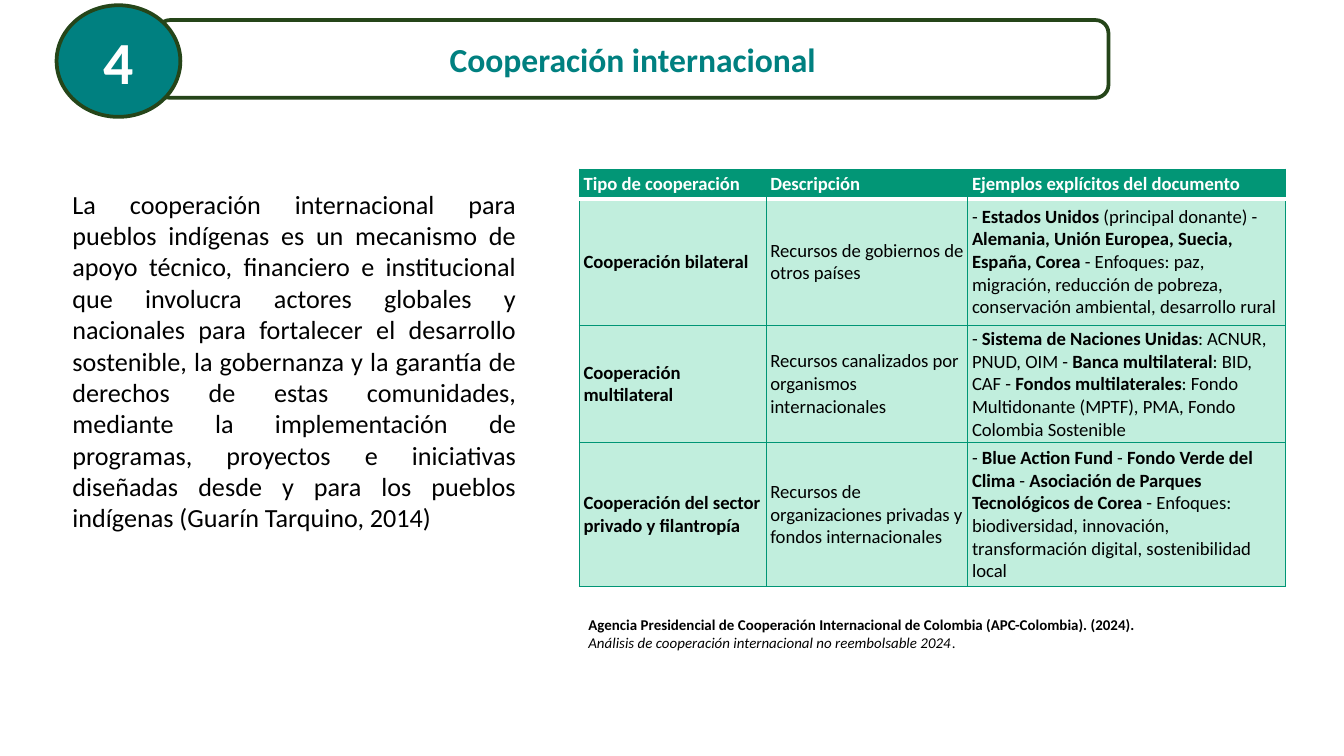
"""Build the slide on international cooperation for indigenous peoples."""
from lxml import etree
from pptx import Presentation
from pptx.dml.color import RGBColor
from pptx.enum.shapes import MSO_SHAPE
from pptx.enum.text import MSO_ANCHOR, MSO_AUTO_SIZE, PP_ALIGN
from pptx.oxml.ns import qn
from pptx.util import Cm, Pt

ROUND, OVAL = MSO_SHAPE.ROUNDED_RECTANGLE, MSO_SHAPE.OVAL
MIDDLE, FIXED = MSO_ANCHOR.MIDDLE, MSO_AUTO_SIZE.NONE
LEFT, CENTER, JUSTIFY = PP_ALIGN.LEFT, PP_ALIGN.CENTER, PP_ALIGN.JUSTIFY

WHITE = RGBColor(0xFF, 0xFF, 0xFF)
BLACK = RGBColor(0x00, 0x00, 0x00)
TEAL = RGBColor(0x00, 0x80, 0x80)
FOREST = RGBColor(0x25, 0x45, 0x19)
GREEN = RGBColor(0x02, 0x96, 0x76)
EDGE = RGBColor(0x00, 0x95, 0x75)
MINT = RGBColor(0xC1, 0xEE, 0xDD)

FONT = "Calibri"
BANNER = (2.97, 0.38, 17.98, 1.47)
BADGE = (1.07, 0.1, 2.34, 2.11)
WIDTHS = (3.53, 3.81, 6)
HEIGHTS = (0.56, 2.39, 2.16, 2.72)

BODY = (
    "La cooperación internacional para pueblos indígenas es un mecanismo de apoyo "
    "técnico, financiero e institucional que involucra actores globales y nacionales "
    "para fortalecer el desarrollo sostenible, la gobernanza y la garantía de derechos "
    "de estas comunidades, mediante la implementación de programas, proyectos e "
    "iniciativas diseñadas desde y para los pueblos indígenas (Guarín Tarquino, 2014)"
)
SOURCE = [
    ("Agencia Presidencial de Cooperación Internacional de Colombia "
     "(APC-Colombia). (2024).", "b"),
    ("\n", ""),
    ("Análisis de cooperación internacional no reembolsable 2024", "i"),
    (".", ""),
]
HEADS = ("Tipo de cooperación", "Descripción", "Ejemplos explícitos del documento")
ROWS = [
    ("Cooperación bilateral", "Recursos de gobiernos de otros países", [
        ("- ", ""), ("Estados Unidos", "b"), (" (principal donante) - ", ""),
        ("Alemania, Unión Europea, Suecia, España, Corea", "b"),
        (" - Enfoques: paz, migración, reducción de pobreza, "
         "conservación ambiental, desarrollo rural", ""),
    ]),
    ("Cooperación multilateral",
     "Recursos canalizados por organismos internacionales", [
         ("- ", ""), ("Sistema de Naciones Unidas", "b"),
         (": ACNUR, PNUD, OIM - ", ""), ("Banca multilateral", "b"),
         (": BID, CAF - ", ""), ("Fondos multilaterales", "b"),
         (": Fondo Multidonante (MPTF), PMA, Fondo Colombia Sostenible", ""),
     ]),
    ("Cooperación del sector privado y filantropía",
     "Recursos de organizaciones privadas y fondos internacionales", [
         ("- ", ""), ("Blue Action Fund", "b"), (" - ", ""),
         ("Fondo Verde del Clima", "b"), (" - ", ""),
         ("Asociación de Parques Tecnológicos de Corea", "b"),
         (" - Enfoques: biodiversidad, innovación, transformación digital, "
          "sostenibilidad local", ""),
     ]),
]


def write(frame, runs, size, color=BLACK, align=LEFT):
    """Fill the first paragraph of a frame with styled runs."""
    para = frame.paragraphs[0]
    para.alignment = align
    for text, style in runs:
        if text == "\n":
            para.add_line_break()
            continue
        run = para.add_run()
        run.text = text
        font = run.font
        font.name, font.size = FONT, Pt(size)
        font.bold, font.italic = style == "b", style == "i"
        font.color.rgb = color


def add_shape(slide, kind, box, fill):
    """Add a filled shape with the dark green outline."""
    shape = slide.shapes.add_shape(kind, *map(Cm, box))
    shape.shadow.inherit = False
    shape.fill.solid()
    shape.fill.fore_color.rgb = fill
    shape.line.color.rgb = FOREST
    shape.line.width = Pt(2)
    shape.text_frame.vertical_anchor = MIDDLE
    return shape


def add_text(slide, box, runs, size, align=LEFT):
    """Add a wrapped text box."""
    frame = slide.shapes.add_textbox(*map(Cm, box)).text_frame
    frame.word_wrap = True
    write(frame, runs, size, align=align)


def set_title(slide, text):
    """Place the title over the banner and bring it to the front."""
    title = slide.shapes.title
    title.left, title.top, title.width, title.height = map(Cm, BANNER)
    frame = title.text_frame
    frame.auto_size = FIXED
    frame.vertical_anchor = MIDDLE
    write(frame, [(text, "b")], 18, TEAL, CENTER)
    slide.shapes._spTree.append(title._element)


def add_edge(cell, side, color, width):
    """Draw one border of a cell, or hide it when there is no color."""
    line = etree.SubElement(cell._tc.get_or_add_tcPr(), qn(f"a:ln{side}"))
    line.set("w", str(Pt(width)))
    if color is None:
        etree.SubElement(line, qn("a:noFill"))
    else:
        fill = etree.SubElement(line, qn("a:solidFill"))
        etree.SubElement(fill, qn("a:srgbClr")).set("val", str(color))


def fill_cell(cell, runs, fill, color, edges):
    """Format a cell, with edges keyed by side, and write its runs."""
    cell.margin_left = cell.margin_right = Cm(0.08)
    cell.margin_top = cell.margin_bottom = Cm(0.05)
    cell.vertical_anchor = MIDDLE
    for side in "LRTB":
        add_edge(cell, side, *edges.get(side, (EDGE, 0.75)))
    cell.fill.solid()
    cell.fill.fore_color.rgb = fill
    write(cell.text_frame, runs, 10, color)


def add_grid(slide):
    """Add the table of cooperation types."""
    size = len(HEIGHTS), len(WIDTHS)
    box = (10.95, 3.2, sum(WIDTHS), sum(HEIGHTS))
    table = slide.shapes.add_table(*size, *map(Cm, box)).table
    for col, width in zip(table.columns, WIDTHS):
        col.width = Cm(width)
    for row, height in zip(table.rows, HEIGHTS):
        row.height = Cm(height)
    rule, none = (WHITE, 2), (None, 0)
    last = len(HEADS) - 1
    for col, head in enumerate(HEADS):
        edges = {"B": rule}
        if col > 0:
            edges["L"] = none
        if col < last:
            edges["R"] = none
        fill_cell(table.cell(0, col), [(head, "b")], GREEN, WHITE, edges)
    for row, (kind, note, cases) in enumerate(ROWS, 1):
        edges = {"T": rule} if row == 1 else {}
        for col, runs in enumerate(([(kind, "b")], [(note, "")], cases)):
            fill_cell(table.cell(row, col), runs, MINT, BLACK, edges)


def main():
    """Build and save the slide."""
    deck = Presentation()
    deck.slide_width, deck.slide_height = Cm(25.4), Cm(14.29)
    slide = deck.slides.add_slide(deck.slide_layouts[5])
    add_shape(slide, ROUND, BANNER, WHITE)
    set_title(slide, "Cooperación internacional")
    badge = add_shape(slide, OVAL, BADGE, TEAL)
    write(badge.text_frame, [("4", "b")], 32, WHITE, CENTER)
    add_text(slide, (1.12, 3.43, 8.89, 7.44), [(BODY, "")], 14, JUSTIFY)
    add_text(slide, (10.87, 11.51, 13.06, 0.94), SOURCE, 8)
    add_grid(slide)
    deck.save("out.pptx")


if __name__ == "__main__":
    main()
